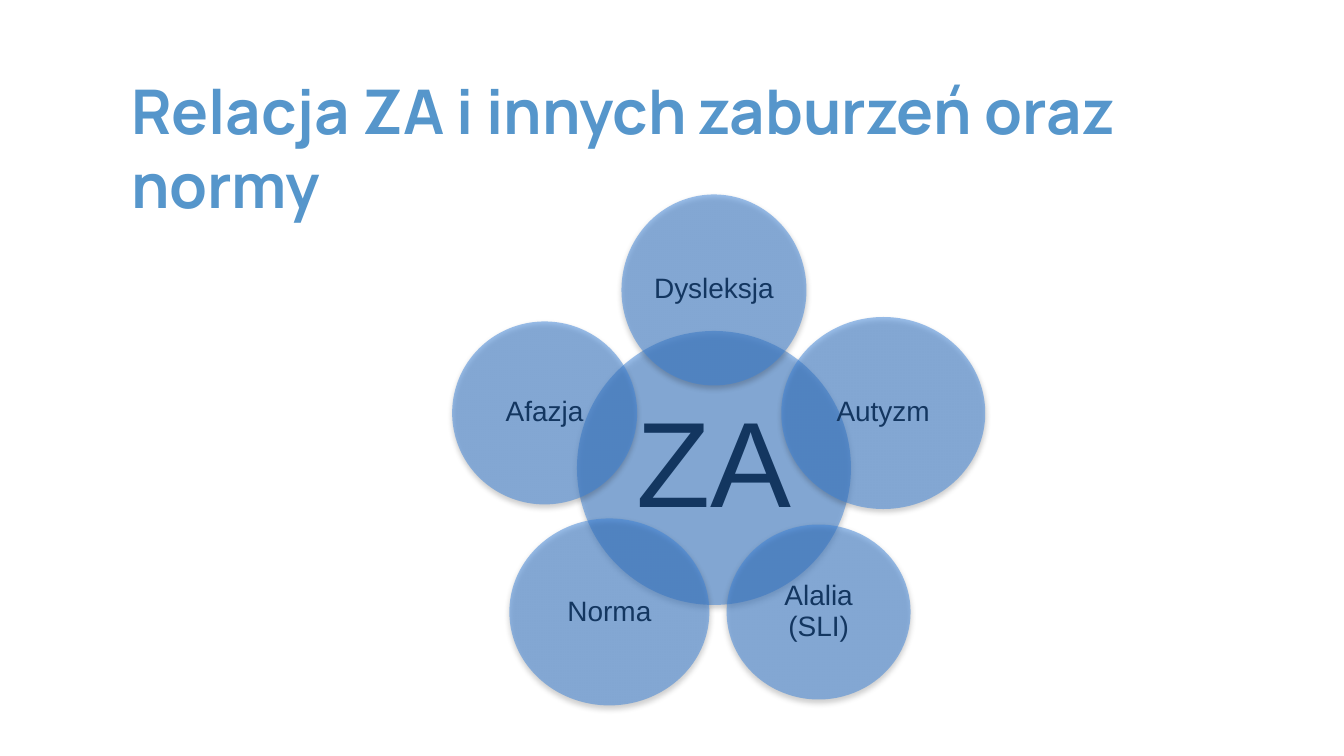
from dataclasses import dataclass
from math import cos, radians, sin, sqrt

from lxml.etree import SubElement
from pptx import Presentation
from pptx.dml.color import RGBColor
from pptx.enum.shapes import MSO_SHAPE
from pptx.enum.text import MSO_ANCHOR, PP_ALIGN
from pptx.oxml.ns import qn
from pptx.util import Pt

EMU_PER_PX = 914400 / 134.4


@dataclass(frozen=True)
class Theme:
    title_color: str = "5696CB"
    circle_color: str = "3981D8"
    label_color: str = "133660"
    shadow_color: str = "000000"
    title_font: str = "Manrope"
    label_font: str = "Arial"
    title_size: int = 33
    center_size: int = 65
    label_size: int = 15


THEME = Theme()
CENTER = (714, 468)
ORBIT = 178
CONDITIONS = [
    ("Dysleksja", 185, 191),
    ("Autyzm", 204, 192),
    ("Alalia (SLI)", 184, 175),
    ("Norma", 200, 187),
    ("Afazja", 185, 183),
]


def px(length):
    return round(length * EMU_PER_PX)


def apply_format(target, values):
    for name, value in values.items():
        setattr(target, name, value)


def add_text(slide, text, box, inset, font, paragraph_format):
    frame = slide.shapes.add_textbox(*map(px, box)).text_frame
    margins = dict.fromkeys(
        ("margin_left", "margin_top", "margin_right", "margin_bottom"), px(inset)
    )
    apply_format(frame, {"word_wrap": True, "vertical_anchor": MSO_ANCHOR.MIDDLE, **margins})
    paragraph = frame.paragraphs[0]
    apply_format(paragraph, paragraph_format)
    run = paragraph.add_run()
    run.text = text
    color = font["color"]
    apply_format(run.font, {key: font[key] for key in font if key != "color"})
    run.font.color.rgb = RGBColor.from_string(color)


def add_alpha(color_element, percent):
    SubElement(color_element, qn("a:alpha"), val=str(percent * 1000))


def add_soft_shadow(circle):
    circle.shadow.inherit = False
    effects = circle._element.spPr.find(qn("a:effectLst"))
    shadow = SubElement(
        effects, qn("a:outerShdw"), blurRad=str(Pt(3.1)), dist=str(Pt(1.6)),
        dir="5400000", rotWithShape="0",
    )
    add_alpha(SubElement(shadow, qn("a:srgbClr"), val=THEME.shadow_color), 38)


def add_circle(slide, label, center, width, height, size, inset):
    left, top = center[0] - width / 2, center[1] - height / 2
    circle = slide.shapes.add_shape(
        MSO_SHAPE.OVAL, *map(px, (left, top, width, height))
    )
    circle.fill.solid()
    circle.fill.fore_color.rgb = RGBColor.from_string(THEME.circle_color)
    add_alpha(circle._element.spPr.find(qn("a:solidFill"))[0], 50)
    circle.line.fill.background()
    add_soft_shadow(circle)

    label_width, label_height = width / sqrt(2), height / sqrt(2)
    label_box = (
        center[0] - label_width / 2, center[1] - label_height / 2,
        label_width, label_height,
    )
    font = {"name": THEME.label_font, "size": Pt(size), "color": THEME.label_color}
    add_text(slide, label, label_box, inset, font,
             {"alignment": PP_ALIGN.CENTER, "line_spacing": 0.9})


def add_title(slide, text):
    font = {
        "name": THEME.title_font, "size": Pt(THEME.title_size),
        "bold": True, "color": THEME.title_color,
    }
    add_text(slide, text, (118, 71, 1109, 151), 13, font, {"alignment": PP_ALIGN.LEFT})


def add_relations(slide):
    add_circle(slide, "ZA", CENTER, 274, 274, THEME.center_size, 12)
    for index, (label, width, height) in enumerate(CONDITIONS):
        angle = radians(index * 360 / len(CONDITIONS))
        center = (CENTER[0] + ORBIT * sin(angle), CENTER[1] - ORBIT * cos(angle))
        add_circle(slide, label, center, width, height, THEME.label_size, 3)


def main():
    presentation = Presentation()
    apply_format(presentation, {"slide_width": px(1344), "slide_height": px(756)})
    slide = presentation.slides.add_slide(presentation.slide_layouts[6])
    add_title(slide, "Relacja ZA i innych zaburzeń oraz normy")
    add_relations(slide)
    presentation.save("out.pptx")


if __name__ == "__main__":
    main()
